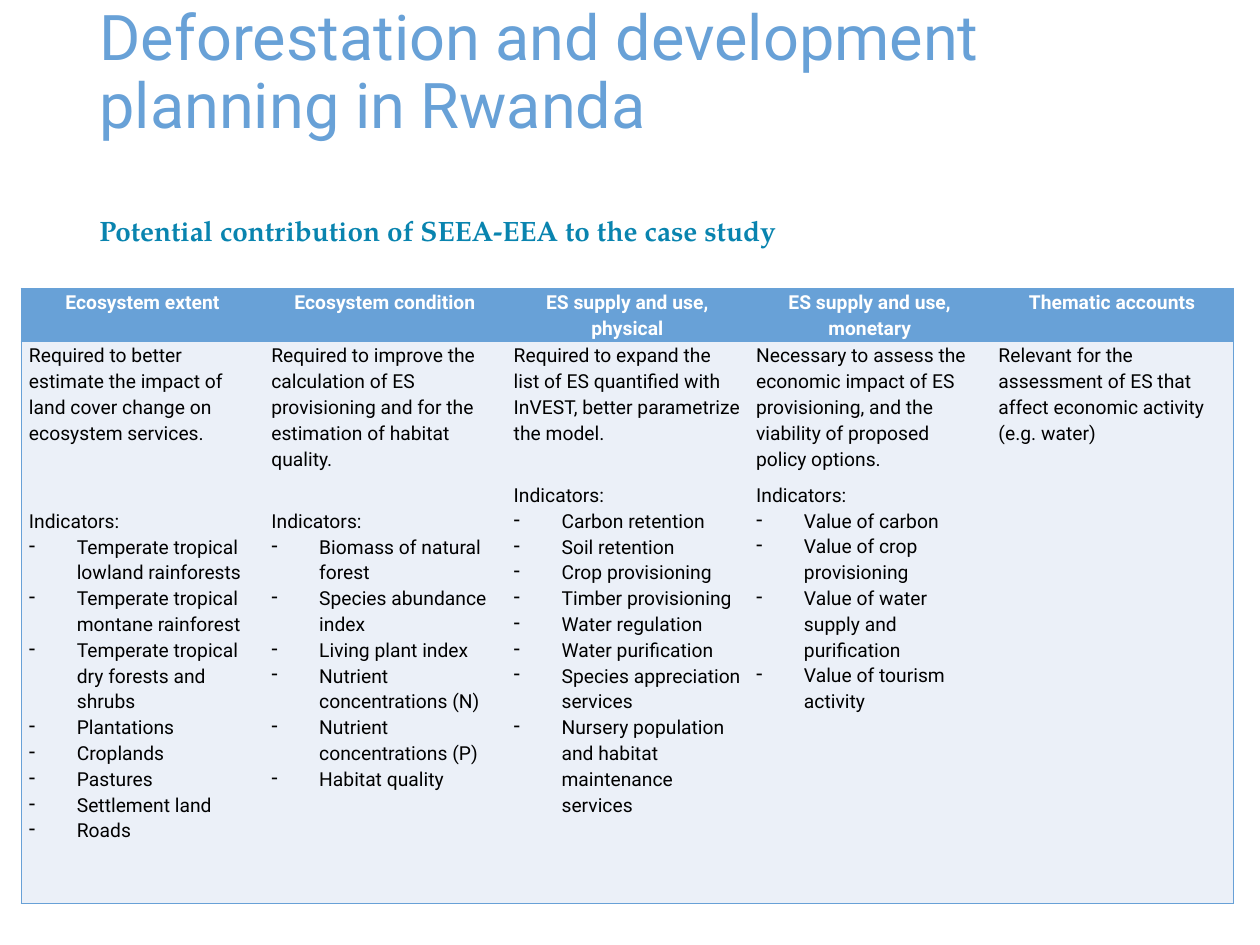
from dataclasses import dataclass

import pptx
import pptx.dml.color
import pptx.enum.text
import pptx.oxml
import pptx.oxml.ns
import pptx.util
from pptx.util import Inches

COLORS = {"accent": "68A1D7", "subtitle": "0984AF", "body": "EBF0F8",
          "white": "FFFFFF", "black": "000000"}
SANS, SERIF = "Roboto", "TeX Gyre Pagella"
TABLE_SIZE = 11
LINE_PITCH = 14.8  # points per table line
INDENT = Inches(0.38)
ALIGN = pptx.enum.text.PP_ALIGN


@dataclass
class Account:
    heading: str
    role: str
    indicators: tuple[str, ...] = ()
    gap_lines: int = 0  # lines left free above the indicators


ACCOUNTS = [
    Account("Ecosystem extent",
            "Required to better estimate the impact of land cover change on "
            "ecosystem services.",
            ("Temperate tropical lowland rainforests",
             "Temperate tropical montane rainforest",
             "Temperate tropical dry forests and shrubs",
             "Plantations", "Croplands", "Pastures", "Settlement land", "Roads"),
            gap_lines=2),
    Account("Ecosystem condition",
            "Required to improve the calculation of ES provisioning and for the "
            "estimation of habitat quality.",
            ("Biomass of natural forest", "Species abundance index",
             "Living plant index", "Nutrient concentrations (N)",
             "Nutrient concentrations (P)", "Habitat quality"),
            gap_lines=1),
    Account("ES supply and use, physical",
            "Required to expand the list of ES quantified with InVEST, better "
            "parametrize the model.",
            ("Carbon retention", "Soil retention", "Crop provisioning",
             "Timber provisioning", "Water regulation", "Water purification",
             "Species appreciation services",
             "Nursery population and habitat maintenance services"),
            gap_lines=1),
    Account("ES supply and use, monetary",
            "Necessary to assess the economic impact of ES provisioning, and the "
            "viability of proposed policy options.",
            ("Value of carbon", "Value of crop provisioning",
             "Value of water supply and purification",
             "Value of tourism activity")),
    Account("Thematic accounts",
            "Relevant for the assessment of ES that affect economic activity "
            "(e.g. water)"),
]


def rgb(color: str) -> pptx.dml.color.RGBColor:
    return pptx.dml.color.RGBColor.from_string(COLORS[color])


def add_run(paragraph, text: str, size: float, color: str,
            font: str = SANS, bold: bool = False) -> None:
    run = paragraph.add_run()
    run.text = text
    run.font.size = pptx.util.Pt(size)
    run.font.name = font
    run.font.bold = bold
    run.font.color.rgb = rgb(color)


def add_cell_line(frame, text: str, color: str = "black", bold: bool = False,
                  after: float = 0, align=ALIGN.LEFT, bullet: bool = False) -> None:
    first = frame.paragraphs[0]
    paragraph = frame.add_paragraph() if first.runs else first
    if bullet:
        properties = paragraph._p.get_or_add_pPr()
        properties.set("marL", str(INDENT))
        properties.set("indent", str(-INDENT))
        properties.append(pptx.oxml.parse_xml(
            f'<a:buChar {pptx.oxml.ns.nsdecls("a")} char="-"/>'))
    paragraph.alignment = align
    paragraph.line_spacing = 1.15
    paragraph.space_after = pptx.util.Pt(after)
    add_run(paragraph, text, TABLE_SIZE, color, bold=bold)


def style_cell(cell, fill: str, lined_sides: str) -> None:
    cell.margin_left = cell.margin_right = Inches(0.06)
    cell.margin_top = cell.margin_bottom = 0
    properties = cell._tc.get_or_add_tcPr()
    for side in "LRTB":
        paint = (f'<a:solidFill><a:srgbClr val="{COLORS["accent"]}"/></a:solidFill>'
                 if side in lined_sides else "<a:noFill/>")
        properties.append(pptx.oxml.parse_xml(
            f'<a:ln{side} {pptx.oxml.ns.nsdecls("a")} w="12700">{paint}</a:ln{side}>'))
    cell.fill.solid()
    cell.fill.fore_color.rgb = rgb(fill)


def add_title(slide) -> None:
    title = slide.shapes.title
    title.left, title.top = Inches(0.69), Inches(0.53)
    title.width, title.height = Inches(7.5), Inches(0.65)
    frame = title.text_frame
    frame.word_wrap = True
    frame.auto_size = pptx.enum.text.MSO_AUTO_SIZE.NONE
    frame.vertical_anchor = pptx.enum.text.MSO_ANCHOR.BOTTOM
    paragraph = frame.paragraphs[0]
    paragraph.alignment = ALIGN.LEFT
    paragraph.line_spacing = 0.9
    add_run(paragraph, "Deforestation and development planning in Rwanda",
            36, "accent")


def add_subtitle(slide) -> None:
    subtitle = slide.shapes.add_textbox(
        Inches(0.69), Inches(1.62), Inches(8.06), Inches(3.62))
    subtitle.text_frame.word_wrap = True
    paragraph = subtitle.text_frame.paragraphs[0]
    paragraph.line_spacing = 1.1
    add_run(paragraph, "Potential contribution of SEEA-EEA to the case study",
            16, "subtitle", SERIF, bold=True)


def add_accounts_table(slide, accounts: list[Account]) -> None:
    table = slide.shapes.add_table(
        2, len(accounts), Inches(0.17), Inches(2.29),
        Inches(9.62), Inches(4.87)).table
    table.first_row = table.horz_banding = False
    table.rows[0].height, table.rows[1].height = Inches(0.41), Inches(4.46)

    for column, account in enumerate(accounts):
        sides = "TB"
        if column == 0:
            sides += "L"
        if column == len(accounts) - 1:
            sides += "R"
        header, details = table.cell(0, column), table.cell(1, column)
        style_cell(header, "accent", sides)
        style_cell(details, "body", sides)

        add_cell_line(header.text_frame, account.heading, "white", bold=True,
                      after=6, align=ALIGN.CENTER)
        add_cell_line(details.text_frame, account.role,
                      after=6 + account.gap_lines * LINE_PITCH)
        if account.indicators:
            add_cell_line(details.text_frame, "Indicators:")
        for indicator in account.indicators:
            add_cell_line(details.text_frame, indicator, bullet=True)


def main() -> None:
    presentation = pptx.Presentation()
    presentation.slide_width, presentation.slide_height = Inches(10), Inches(7.5)
    # Layout 5 is title only
    slide = presentation.slides.add_slide(presentation.slide_layouts[5])
    add_title(slide)
    add_subtitle(slide)
    add_accounts_table(slide, ACCOUNTS)
    presentation.save("out.pptx")


if __name__ == "__main__":
    main()
